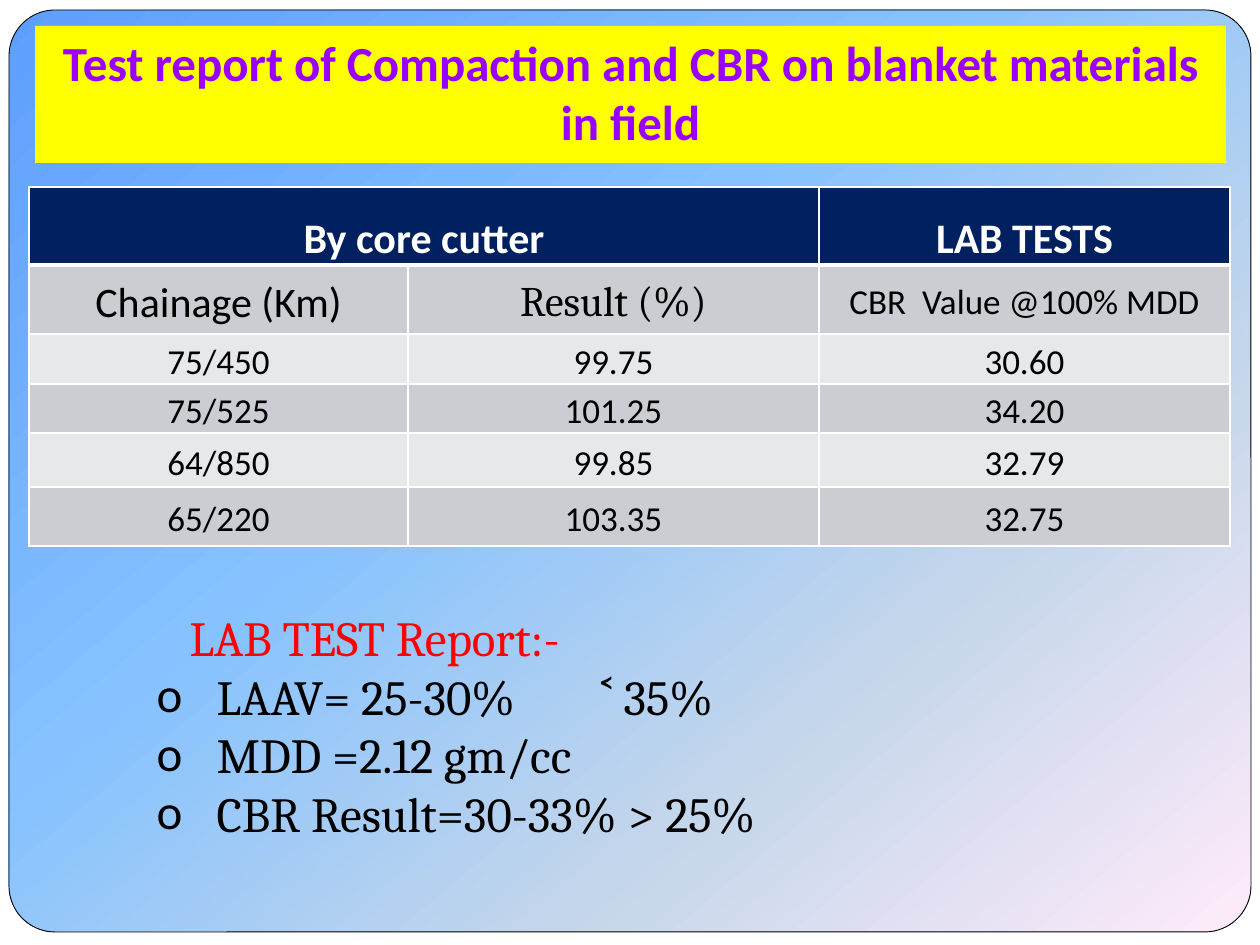
from lxml import etree
from pptx import Presentation
from pptx import util as u
from pptx.dml.color import RGBColor
from pptx.enum import shapes, text
from pptx.oxml.ns import qn

COLORS = {
    "white": "FFFFFF", "black": "000000", "red": "FF0000",
    "yellow": "FFFF00", "purple": "9900FF", "navy": "002060",
    "band_dark": "CCCDD2", "band_light": "E7E8EA",
}
GRADIENT = [(0, "5E9EFF"), (40, "85C2FF"), (70, "C4D6EB"), (100, "FFEBFA")]

TITLE = "Test report of Compaction and CBR on blanket materials in field"
COLUMN_WIDTHS = [379, 411, 411]
ROW_HEIGHTS = [78, 69, 50, 49, 54, 59]
ROWS = [
    ["By core cutter", "", "LAB TESTS"],
    ["Chainage (Km)", "Result (%)", "CBR  Value @100% MDD"],
    ["75/450", "99.75", "30.60"],
    ["75/525", "101.25", "34.20"],
    ["64/850", "99.85", "32.79"],
    ["65/220", "103.35", "32.75"],
]
REPORT_HEADING = "LAB TEST Report:-"
REPORT_ITEMS = ["LAAV= 25-30%\t˂ 35%", "MDD =2.12 gm/cc", "CBR Result=30-33% > 25%"]


def px(length):
    return u.Emu(round(length * 914400 / 126))


def rgb(name):
    return RGBColor.from_string(COLORS[name])


def place(shape, box):
    shape.left, shape.top, shape.width, shape.height = map(px, box)


def set_font(para, size, color, name="Calibri", bold=False):
    font = para.font
    font.name, font.size, font.bold = name, u.Pt(size), bold
    font.color.rgb = rgb(color)


def add_panel(page, box):
    """Rounded gradient panel behind everything else."""
    panel = page.shapes.add_shape(shapes.MSO_SHAPE.ROUNDED_RECTANGLE, *map(px, box))
    panel.adjustments[0] = 0.05
    panel.shadow.inherit = False
    panel.line.color.rgb = rgb("black")
    panel.line.width = u.Pt(0.5)
    panel.fill.gradient()
    panel.fill.gradient_angle = 310
    stops = panel._element.spPr.find(".//" + qn("a:gsLst"))
    for stop in list(stops):
        stops.remove(stop)
    for percent, color in GRADIENT:
        stop = etree.SubElement(stops, qn("a:gs"), pos=str(percent * 1000))
        etree.SubElement(stop, qn("a:srgbClr"), val=color)
    page.shapes._spTree.insert(2, panel._element)


def fill_title(title, box):
    place(title, box)
    title.fill.solid()
    title.fill.fore_color.rgb = rgb("yellow")
    frame = title.text_frame
    frame.text = TITLE
    frame.auto_size = text.MSO_AUTO_SIZE.NONE
    frame.vertical_anchor = text.MSO_ANCHOR.BOTTOM
    frame.margin_bottom = px(13)
    para = frame.paragraphs[0]
    para.alignment = text.PP_ALIGN.CENTER
    set_font(para, 28, "purple", bold=True)


def set_borders(cell, widths):
    """White cell borders; widths in points by side L, R, T, B."""
    properties = cell._tc.get_or_add_tcPr()
    for side, width in widths.items():
        line = etree.SubElement(properties, qn(f"a:ln{side}"), w=str(u.Pt(width)))
        fill = etree.SubElement(line, qn("a:solidFill"))
        etree.SubElement(fill, qn("a:srgbClr"), val=COLORS["white"])


def style_cell(cell, row, column):
    header = row == 0
    set_borders(cell, {"L": 1, "R": 1, "T": 3 if row == 1 else 1, "B": 3 if header else 1})
    cell.fill.solid()
    cell.fill.fore_color.rgb = rgb(
        "navy" if header else "band_dark" if row % 2 else "band_light")
    cell.margin_left = cell.margin_right = px(9)
    cell.margin_top = cell.margin_bottom = 0
    cell.vertical_anchor = text.MSO_ANCHOR.BOTTOM if header else text.MSO_ANCHOR.MIDDLE
    para = cell.text_frame.paragraphs[0]
    para.alignment = text.PP_ALIGN.CENTER
    para.line_spacing = 1.15
    large = header or (row == 1 and column < 2)
    set_font(para, 24 if large else 20, "white" if header else "black",
             "Cambria" if (row, column) == (1, 1) else "Calibri", bold=header)


def add_results_table(page, left, top):
    table = page.shapes.add_table(
        len(ROWS), len(COLUMN_WIDTHS), px(left), px(top),
        px(sum(COLUMN_WIDTHS)), px(sum(ROW_HEIGHTS))).table
    for column, width in zip(table.columns, COLUMN_WIDTHS):
        column.width = px(width)
    for row, height in zip(table.rows, ROW_HEIGHTS):
        row.height = px(height)
    for r, values in enumerate(ROWS):
        for c, value in enumerate(values):
            cell = table.cell(r, c)
            cell.text = value
            style_cell(cell, r, c)
    table.cell(0, 0).merge(table.cell(0, 1))


def set_bullet(para, indent, tab, char=None):
    """Hanging bullet with a tab stop, or a plain indent when there is no char."""
    properties = para._p.get_or_add_pPr()
    properties.set("marL", str(px(indent)))
    properties.set("indent", str(px(-indent) if char else 0))
    if char:
        etree.SubElement(properties, qn("a:buFont"), typeface="Calibri")
        etree.SubElement(properties, qn("a:buChar"), char=char)
        tabs = etree.SubElement(properties, qn("a:tabLst"))
        etree.SubElement(tabs, qn("a:tab"), pos=str(px(tab)), algn="l")
    else:
        etree.SubElement(properties, qn("a:buNone"))


def fill_report(body, box):
    place(body, box)
    frame = body.text_frame
    frame.auto_size = text.MSO_AUTO_SIZE.NONE
    for i, line in enumerate([REPORT_HEADING] + REPORT_ITEMS):
        para = frame.paragraphs[0] if i == 0 else frame.add_paragraph()
        para.add_run().text = line
        para.space_before = u.Pt(0)
        if i == 0:
            set_bullet(para, 33, 443)
        else:
            set_bullet(para, 60, 443, "o")
        set_font(para, 28, "black" if i else "red", "Cambria")


def main():
    deck = Presentation()
    deck.slide_width, deck.slide_height = px(1260), px(945)
    page = deck.slides.add_slide(deck.slide_layouts[1])
    page.background.fill.solid()
    page.background.fill.fore_color.rgb = rgb("white")
    add_panel(page, (9, 10, 1242, 922))
    add_results_table(page, 29, 187)
    fill_title(page.shapes.title, (35, 26, 1191, 137))
    fill_report(page.placeholders[1], (144, 601, 992, 251))
    deck.save("out.pptx")


if __name__ == "__main__":
    main()
